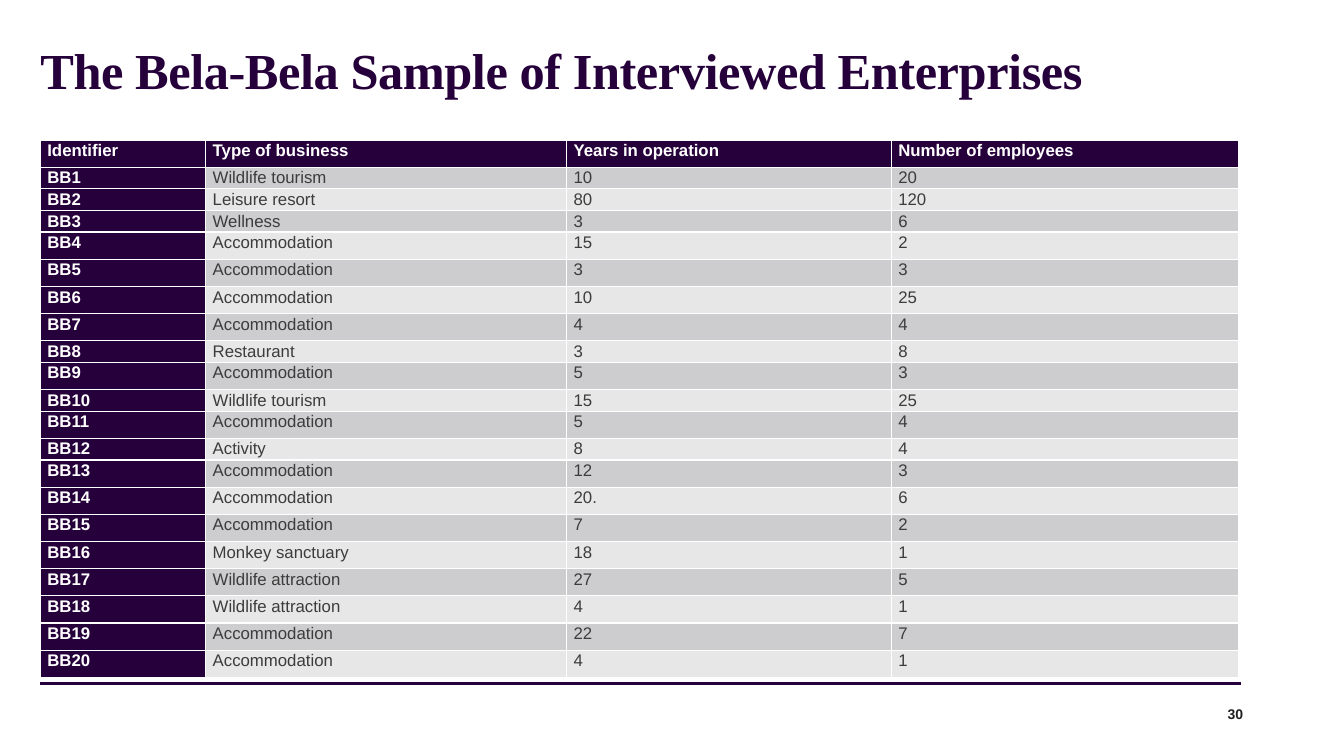
from lxml import etree
from pptx import Presentation
from pptx import util as u
from pptx.dml.color import RGBColor
from pptx.enum import shapes, text
from pptx.oxml.ns import qn

PURPLE, WHITE, INK, BLACK = "26003B", "FFFFFF", "3C3C3C", "1E1E1E"
BANDS = ("CDCCCE", "E8E7E8")
LEFT = 0.4
COLUMNS = (1.64, 3.58, 3.22, 3.45)
ROW, COMPACT_ROW = 0.27, 0.2
COMPACT_ENTERPRISES = {1, 2, 3, 8, 10, 12}
YEARS_COLUMN = 2
HEADER = ("Identifier", "Type of business", "Years in operation", "Number of employees")
ENTERPRISES = [
    ("Wildlife tourism", "10", "20"),
    ("Leisure resort", "80", "120"),
    ("Wellness", "3", "6"),
    ("Accommodation", "15", "2"),
    ("Accommodation", "3", "3"),
    ("Accommodation", "10", "25"),
    ("Accommodation", "4", "4"),
    ("Restaurant", "3", "8"),
    ("Accommodation", "5", "3"),
    ("Wildlife tourism", "15", "25"),
    ("Accommodation", "5", "4"),
    ("Activity", "8", "4"),
    ("Accommodation", "12", "3"),
    ("Accommodation", "20.", "6"),
    ("Accommodation", "7", "2"),
    ("Monkey sanctuary", "18", "1"),
    ("Wildlife attraction", "27", "5"),
    ("Wildlife attraction", "4", "1"),
    ("Accommodation", "22", "7"),
    ("Accommodation", "4", "1"),
]


def color(hex_value):
    return RGBColor.from_string(hex_value)


def style_run(r, size, hex_value, bold=True, font="Arial"):
    r.font.size = u.Pt(size)
    r.font.name = font
    r.font.bold = bold
    r.font.color.rgb = color(hex_value)


def add_text(s, box, words, anchor, align, size, hex_value, font="Arial"):
    """Add a one-line text box without margins and return its run."""
    tf = s.shapes.add_textbox(*map(u.Inches, box)).text_frame
    tf.word_wrap = True
    tf.margin_left = tf.margin_right = tf.margin_top = tf.margin_bottom = 0
    tf.vertical_anchor = anchor
    tf.text = words
    p = tf.paragraphs[0]
    p.alignment = align
    style_run(p.runs[0], size, hex_value, font=font)
    return p.runs[0]


def add_title(s, words):
    r = add_text(s, (LEFT, 0.21, 12.52, 0.79), words, text.MSO_ANCHOR.BOTTOM,
                 text.PP_ALIGN.LEFT, 36, PURPLE, "Times New Roman")
    r.font._element.set("spc", "-30")
    s.shapes[-1].text_frame.paragraphs[0].line_spacing = 0.9


def add_rule(s, y, right):
    line = s.shapes.add_connector(shapes.MSO_CONNECTOR.STRAIGHT, u.Inches(LEFT),
                                  u.Inches(y), u.Inches(right), u.Inches(y))
    line.line.color.rgb = color(PURPLE)
    line.line.width = u.Pt(2.25)
    etree.SubElement(line._element.spPr, qn("a:effectLst"))


def fill_cell(cell, words, fill, hex_value, bold, align):
    cell.fill.solid()
    cell.fill.fore_color.rgb = color(fill)
    cell.margin_left = cell.margin_right = u.Inches(0.07)
    cell.margin_top = cell.margin_bottom = 0
    cell.text = words
    p = cell.text_frame.paragraphs[0]
    p.alignment = align
    p.line_spacing = 1.07
    p.space_after = u.Pt(8)
    style_run(p.runs[0], 12, hex_value, bold)


def add_enterprise_table(s, top):
    rows = [HEADER] + [(f"BB{n}", *row) for n, row in enumerate(ENTERPRISES, 1)]
    heights = [COMPACT_ROW if n in COMPACT_ENTERPRISES else ROW for n in range(len(rows))]
    frame = s.shapes.add_table(len(rows), len(COLUMNS), u.Inches(LEFT), u.Inches(top),
                               u.Inches(sum(COLUMNS)), u.Inches(sum(heights)))
    table = frame.table
    table.first_col = True
    for column, width in zip(table.columns, COLUMNS):
        column.width = u.Inches(width)
    for i, row in enumerate(rows):
        table.rows[i].height = u.Inches(heights[i])
        for j, words in enumerate(row):
            heading = i == 0 or j == 0
            fill = PURPLE if heading else BANDS[(i - 1) % 2]
            align = text.PP_ALIGN.JUSTIFY if j == YEARS_COLUMN else text.PP_ALIGN.LEFT
            fill_cell(table.cell(i, j), words, fill, WHITE if heading else INK, heading, align)


def main():
    prs = Presentation()
    prs.slide_width, prs.slide_height = u.Inches(13.33), u.Inches(7.5)
    s = prs.slides.add_slide(prs.slide_layouts[6])
    add_text(s, (11.79, 6.96, 0.54, 0.24), "30", text.MSO_ANCHOR.MIDDLE,
             text.PP_ALIGN.RIGHT, 10, BLACK)
    add_rule(s, 6.78, 12.31)
    add_title(s, "The Bela-Bela Sample of Interviewed Enterprises")
    add_enterprise_table(s, 1.39)
    prs.save("out.pptx")


if __name__ == "__main__":
    main()
